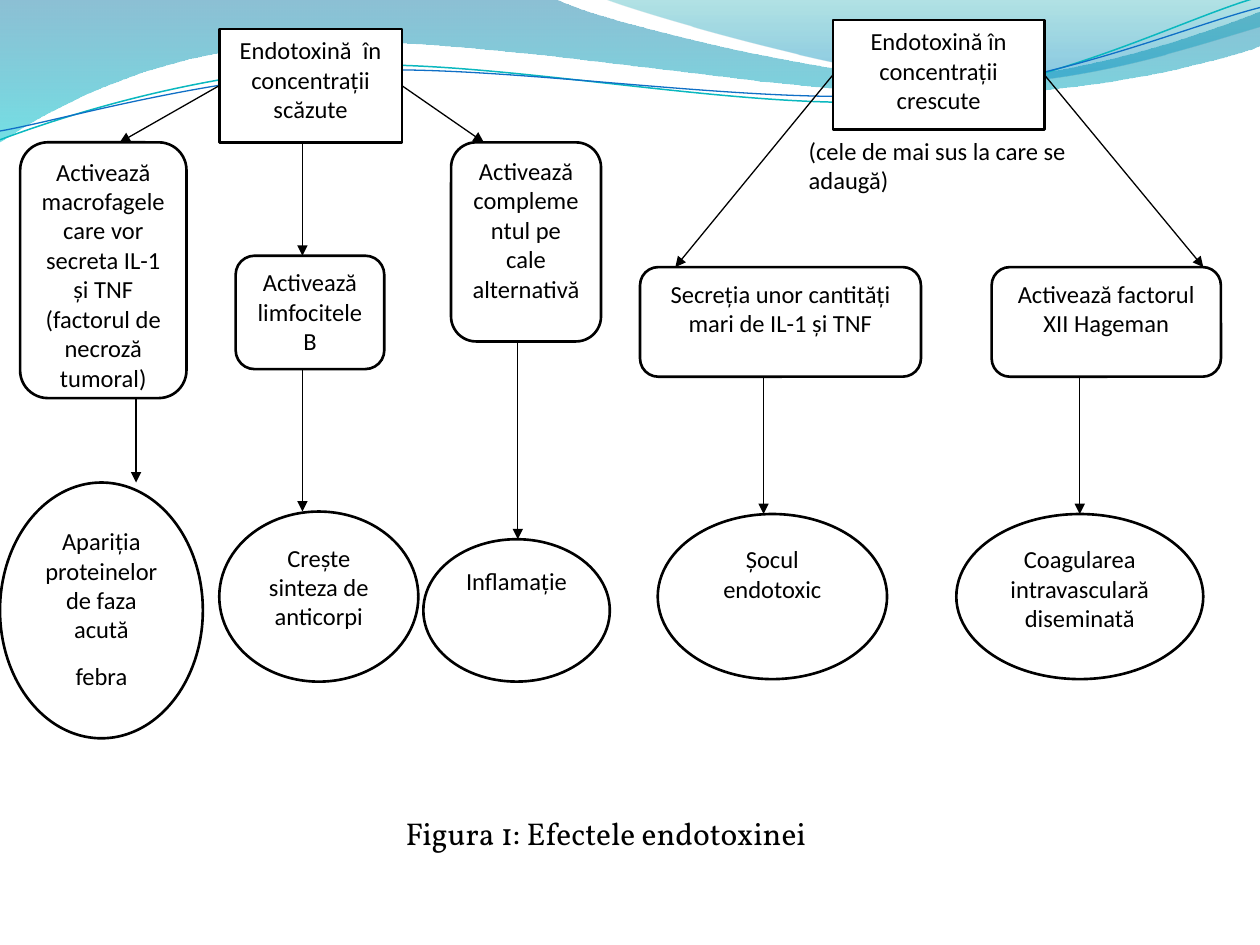
from lxml.etree import SubElement
from pptx import Presentation
from pptx.dml.color import RGBColor
from pptx.enum.lang import MSO_LANGUAGE_ID as LANGUAGE
from pptx.enum.shapes import MSO_CONNECTOR as LINK, MSO_SHAPE as FORM
from pptx.enum.text import MSO_ANCHOR as ANCHOR, MSO_AUTO_SIZE as FIT, PP_ALIGN as ALIGN
from pptx.oxml.ns import qn
from pptx.util import Inches, Pt

BLACK, WHITE = "000000", "FFFFFF"
RECT, ROUND, OVAL = FORM.RECTANGLE, FORM.ROUNDED_RECTANGLE, FORM.OVAL
TOP, LEFT, RIGHT = 0, 1, 3

BANDS = [
    ([(0, 0), (4.4, -0.01),
      (4.76, 0.17, 6.64, 0.63, 7.58, 0.63), (8.53, 0.63, 9.58, 0.26, 10, 0.09),
      (10.01, 0.36),
      (9.83, 0.44, 8.7, 0.76, 7.46, 0.75), (6.22, 0.75, 3.82, 0.28, 2.57, 0.34),
      (1.29, 0.36, 0.46, 0.83, -0.01, 1.13)],
     [(0, "0074A1", 45), (1, "00C6CF", 55)]),
    ([(4.79, -0.01),
      (5.09, 0.11, 6.82, 0.62, 7.69, 0.65), (8.56, 0.69, 9.61, 0.32, 10, 0.21),
      (10, 0)],
     [(0, "00A1A9", 30), (0.8, "008BBF", 45)]),
]
WAVES = [
    ([(0, 1.11), (0.48, 0.93, 1.58, 0.57, 2.77, 0.52),
      (3.95, 0.47, 5.93, 0.89, 7.13, 0.8), (8.33, 0.71, 9.38, 0.15, 9.98, -0.02)],
     "0AB8BF", 0.85),
    ([(0, 1.04), (0.47, 0.96, 1.64, 0.61, 2.83, 0.56),
      (4.03, 0.51, 5.97, 0.84, 7.17, 0.75), (8.36, 0.67, 9.41, 0.21, 10, 0.06)],
     "0F6FC6", 0.75),
]
NOTE = ("(cele de mai sus la care se adaugă)", (6.32, 1.03, 2.37, 0.44))
NODES = {
    "macrophages": (ROUND, (0.16, 1.13, 1.32, 2.03),
                    "Activează macrofagele care vor secreta IL-1 şi TNF (factorul de necroză tumoral)"),
    "low": (RECT, (1.74, 0.23, 1.45, 0.9), "Endotoxină  în concentraţii scăzute"),
    "lymphocytes": (ROUND, (1.87, 2.03, 1.18, 0.9), "Activează limfocitele B"),
    "complement": (ROUND, (3.58, 1.13, 1.19, 1.58), "Activează complementul pe cale alternativă"),
    "proteins": (OVAL, (0, 3.83, 1.61, 2.03), "Apariţia proteinelor de faza acută\nfebra"),
    "antibodies": (OVAL, (1.74, 4.06, 1.58, 1.35), "Creşte sinteza de anticorpi"),
    "inflammation": (OVAL, (3.36, 4.28, 1.48, 1.13), "Inflamaţie"),
    "high": (RECT, (6.61, 0.16, 1.68, 0.87), "Endotoxină în concentraţii crescute"),
    "secretion": (ROUND, (5.08, 2.12, 2.23, 0.87), "Secreţia unor cantităţi mari de IL-1 şi TNF"),
    "hageman": (ROUND, (7.87, 2.12, 1.82, 0.87), "Activează factorul XII Hageman"),
    "shock": (OVAL, (5.22, 4.08, 1.82, 1.31), "Şocul endotoxic"),
    "coagulation": (OVAL, (7.59, 4.08, 1.96, 1.31), "Coagularea intravasculară diseminată"),
}
BRANCHES = [
    ("low", LEFT, "macrophages", 0.95), ("low", RIGHT, "complement", 3.84),
    ("high", LEFT, "secretion", 5.36), ("high", RIGHT, "hageman", 9.55),
]
DROPS = [
    ("low", "lymphocytes", 2.4), ("lymphocytes", "antibodies", 2.4),
    ("complement", "inflammation", 4.11), ("macrophages", "proteins", 1.08),
    ("secretion", "shock", 6.06), ("hageman", "coagulation", 8.57),
]
CAPTION = ("Figura 1: Efectele endotoxinei", (3.12, 6.41, 3.59, 0.4))


def color(hex_code):
    return RGBColor.from_string(hex_code)


def inches(values):
    return [Inches(value) for value in values]


def write(shape, text, size=14, font="Calibri", align=ALIGN.CENTER, after=10, fit=FIT.NONE):
    frame = shape.text_frame
    frame.word_wrap = True
    frame.auto_size = fit
    frame.vertical_anchor = ANCHOR.TOP
    frame.text = text
    for paragraph in frame.paragraphs:
        paragraph.alignment = align
        paragraph.space_after = Pt(after)
        for run in paragraph.runs:
            run.font.size = Pt(size)
            run.font.name = font
            run.font.color.rgb = color(BLACK)
            run.font.language_id = LANGUAGE.ROMANIAN


def outline(shape, hex_code, width):
    shape.line.color.rgb = color(hex_code)
    shape.line.width = Pt(width)


def add_box(form, place, text, edge=BLACK, width=1.5, **style):
    box = shapes.add_shape(form, *inches(place))
    box.shadow.inherit = False
    box.fill.solid()
    box.fill.fore_color.rgb = color(WHITE)
    outline(box, edge, width)
    write(box, text, **style)
    return box


def add_curve(steps, closed):
    points = [step[i:i + 2] for step in steps for i in range(0, len(step), 2)]
    builder = shapes.build_freeform(*inches(points[0]))
    builder.add_line_segments([inches(point) for point in points[1:]], close=closed)
    curve = builder.convert_to_shape()
    curve.shadow.inherit = False
    segments = iter(list(curve.element.iter(qn("a:lnTo"))))
    for step in steps[1:]:
        first = next(segments)
        if len(step) == 6:
            first.tag = qn("a:cubicBezTo")
            for follower in (next(segments), next(segments)):
                first.append(follower[0])
                follower.getparent().remove(follower)
    return curve


def add_band(steps, stops):
    band = add_curve(steps, True)
    band.line.fill.background()
    band.fill.gradient()
    band.fill.gradient_angle = 270
    for stop, (position, hex_code, opacity) in zip(band.fill.gradient_stops, stops):
        stop.position = position
        stop.color.rgb = color(hex_code)
    tints = band.element.spPr.iter(qn("a:srgbClr"))
    for tint, (position, hex_code, opacity) in zip(tints, stops):
        SubElement(tint, qn("a:alpha"), val=str(opacity * 1000))


def add_arrow(start, end):
    arrow = shapes.add_connector(LINK.STRAIGHT, *inches(start + end))
    outline(arrow, BLACK, 0.75)
    SubElement(arrow.element.spPr.find(qn("a:ln")), qn("a:tailEnd"), type="triangle")
    SubElement(arrow.element.spPr, qn("a:effectLst"))
    return arrow


deck = Presentation()
deck.slide_width, deck.slide_height = Inches(10), Inches(7.5)
slide = deck.slides.add_slide(deck.slide_layouts[6])
shapes = slide.shapes

for steps, stops in BANDS:
    add_band(steps, stops)
for steps, hex_code, width in WAVES:
    wave = add_curve(steps, False)
    wave.fill.background()
    outline(wave, hex_code, width)

note, note_place = NOTE
add_box(RECT, note_place, note, edge=WHITE, width=0.75, align=ALIGN.LEFT)
boxes = {key: add_box(*node) for key, node in NODES.items()}

for source, side, target, x in BRANCHES:
    left, top, width, height = NODES[source][1]
    start = (left if side == LEFT else left + width, top + height / 2)
    add_arrow(start, (x, NODES[target][1][1])).begin_connect(boxes[source], side)

for source, target, x in DROPS:
    top, height = NODES[source][1][1::2]
    left, end, width = NODES[target][1][:3]
    arrow = add_arrow((x, top + height), (x, end))
    if abs(left + width / 2 - x) < 0.01:
        arrow.end_connect(boxes[target], TOP)

caption, caption_place = CAPTION
caption_box = shapes.add_textbox(*inches(caption_place))
write(caption_box, caption, size=18, font="Vollkorn", align=ALIGN.LEFT, after=0,
      fit=FIT.SHAPE_TO_FIT_TEXT)

deck.save("out.pptx")
